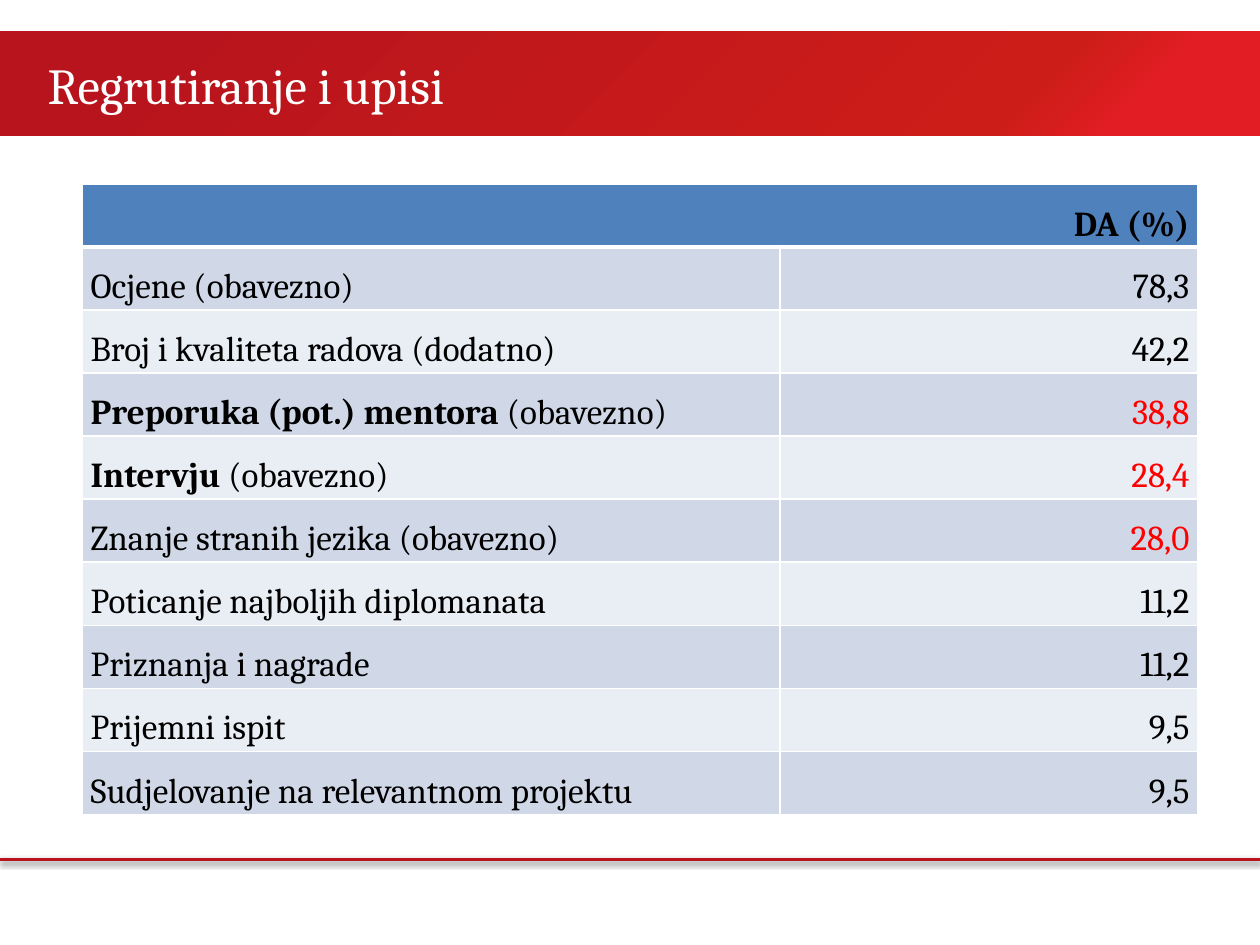
"""Build the slide on recruitment and enrolment criteria."""
from dataclasses import dataclass

from lxml.etree import SubElement
from pptx import Presentation
from pptx.dml.color import RGBColor
from pptx.enum.shapes import MSO_CONNECTOR, MSO_SHAPE
from pptx.enum.text import MSO_ANCHOR, PP_ALIGN
from pptx.oxml.ns import qn
from pptx.util import Inches, Pt


@dataclass(frozen=True)
class Theme:
    font: str = "Cambria"
    title_size: float = 28.8
    body_size: float = 20
    white: str = "FFFFFF"
    text: str = "000000"
    accent: str = "FF0000"
    rule: str = "B8141D"
    header: str = "4F81BD"
    bands: tuple = ("D0D8E8", "E9EDF4")
    banner: tuple = ((11, "E21D24"), (20, "CD1D19"), (89, "B8141D"))


THEME = Theme()
ROWS = [
    ([("Ocjene (obavezno)", False)], "78,3", THEME.text),
    ([("Broj i kvaliteta radova (dodatno)", False)], "42,2", THEME.text),
    ([("Preporuka (pot.) mentora ", True), ("(obavezno)", False)], "38,8", THEME.accent),
    ([("Intervju ", True), ("(obavezno)", False)], "28,4", THEME.accent),
    ([("Znanje stranih jezika (obavezno)", False)], "28,0", THEME.accent),
    ([("Poticanje najboljih diplomanata", False)], "11,2", THEME.text),
    ([("Priznanja i nagrade", False)], "11,2", THEME.text),
    ([("Prijemni ispit", False)], "9,5", THEME.text),
    ([("Sudjelovanje na relevantnom projektu", False)], "9,5", THEME.text),
]


def add_run(p, text, size, color, bold=False):
    r = p.add_run()
    r.text = text
    r.font.name = THEME.font
    r.font.size = Pt(size)
    r.font.bold = bold
    r.font.color.rgb = RGBColor.from_string(color)


def add_color(parent, color):
    return SubElement(parent, qn("a:srgbClr"), val=color)


def add_banner(s):
    sp = s.shapes.add_shape(MSO_SHAPE.RECTANGLE, 0, Inches(0.25), Inches(10), Inches(0.83))
    sp.shadow.inherit = False
    sp.line.fill.background()
    sp.fill.gradient()
    sp.fill.gradient_angle = 135
    stops = sp._element.spPr.find(qn("a:gradFill")).find(qn("a:gsLst"))
    for stop in list(stops):
        stops.remove(stop)
    for percent, color in THEME.banner:
        add_color(SubElement(stops, qn("a:gs"), pos=str(percent * 1000)), color)


def add_rule(s):
    y = Inches(6.82)
    line = s.shapes.add_connector(MSO_CONNECTOR.STRAIGHT, 0, y, Inches(10), y)
    line.line.width = Pt(2)
    line.line.color.rgb = RGBColor.from_string(THEME.rule)
    effects = SubElement(line._element.spPr, qn("a:effectLst"))
    shadow = SubElement(effects, qn("a:outerShdw"), blurRad=str(Pt(3.1)),
                        dist=str(Pt(1.6)), dir="5400000", rotWithShape="0")
    SubElement(add_color(shadow, THEME.text), qn("a:alpha"), val="38000")


def add_title(s, text):
    tf = s.shapes.add_textbox(Inches(0.28), Inches(0.36), Inches(8.11), Inches(0.62)).text_frame
    tf.word_wrap = True
    tf.vertical_anchor = MSO_ANCHOR.MIDDLE
    add_run(tf.paragraphs[0], text, THEME.title_size, THEME.white)


def set_borders(cell, bottom=1):
    props = cell._tc.get_or_add_tcPr()
    for side, width in (("L", 1), ("R", 1), ("T", 1), ("B", bottom)):
        ln = SubElement(props, qn(f"a:ln{side}"), w=str(Pt(width)))
        add_color(SubElement(ln, qn("a:solidFill")), THEME.white)


def style_cell(cell, fill, bottom=1):
    set_borders(cell, bottom)
    cell.fill.solid()
    cell.fill.fore_color.rgb = RGBColor.from_string(fill)
    cell.margin_left = cell.margin_right = Inches(0.07)
    cell.margin_top = cell.margin_bottom = 0


def write_cell(cell, runs, align, color=THEME.text):
    p = cell.text_frame.paragraphs[0]
    p.alignment = align
    p.line_spacing = 1.5
    for text, bold in runs:
        add_run(p, text, THEME.body_size, color, bold)


def add_criteria_table(s):
    count = len(ROWS) + 1
    table = s.shapes.add_table(count, 2, Inches(0.65), Inches(1.46),
                               Inches(8.86), Inches(0.47 * count)).table
    table.first_row = table.horz_banding = False
    for column, width in zip(table.columns, (5.54, 3.32)):
        column.width = Inches(width)
    for cell in table.rows[0].cells:
        style_cell(cell, THEME.header, bottom=3)
    header = table.cell(0, 0)
    header.merge(table.cell(0, 1))
    header.vertical_anchor = MSO_ANCHOR.MIDDLE
    write_cell(header, [("DA (%)", True)], PP_ALIGN.RIGHT)
    for i, (label, value, color) in enumerate(ROWS):
        name_cell, value_cell = table.rows[i + 1].cells
        for cell in (name_cell, value_cell):
            style_cell(cell, THEME.bands[i % 2])
        write_cell(name_cell, label, PP_ALIGN.JUSTIFY)
        write_cell(value_cell, [(value, False)], PP_ALIGN.RIGHT, color)


def main():
    prs = Presentation()
    prs.slide_width, prs.slide_height = Inches(10), Inches(7.5)
    s = prs.slides.add_slide(prs.slide_layouts[6])
    add_banner(s)
    add_rule(s)
    add_title(s, "Regrutiranje i upisi")
    add_criteria_table(s)
    prs.save("out.pptx")


if __name__ == "__main__":
    main()
